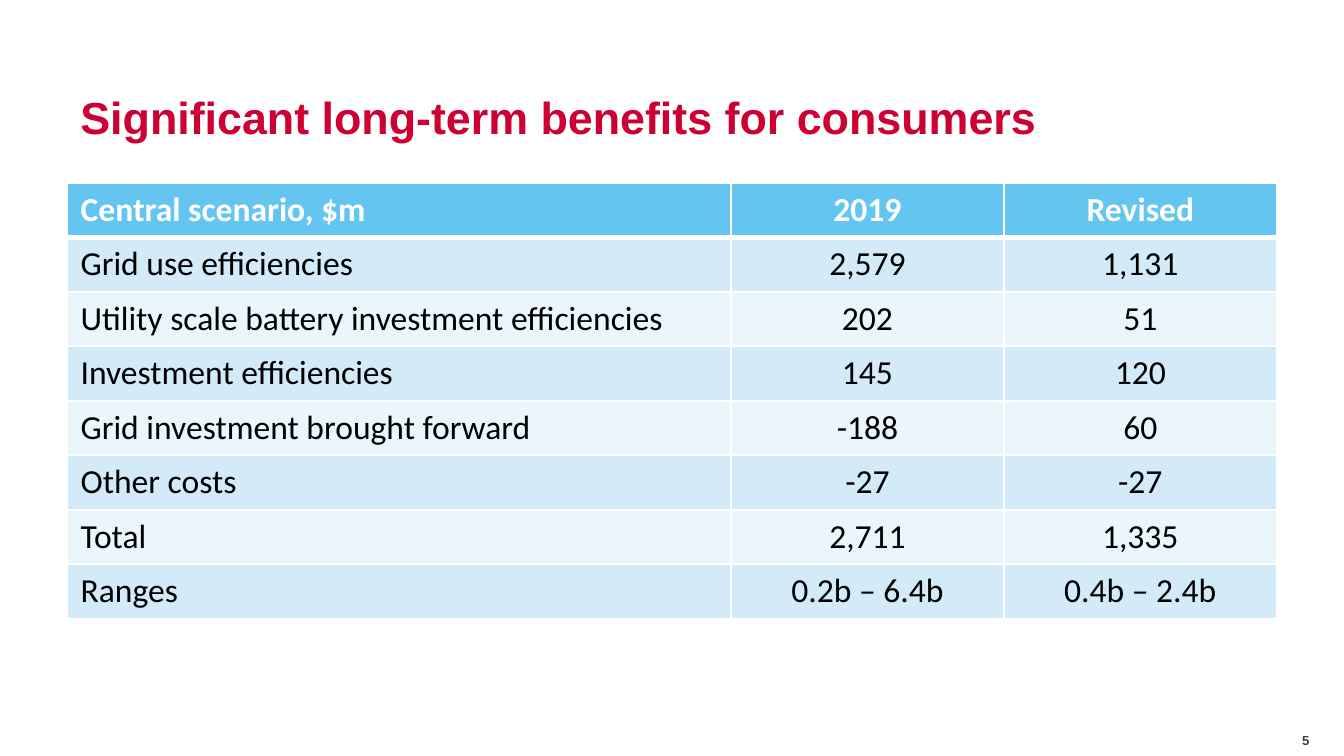
import pptx
import pptx.util
import pptx.dml.color
import pptx.enum.text
import pptx.oxml
import pptx.oxml.ns
from pptx.util import Inches

RGBColor = pptx.dml.color.RGBColor
RED = RGBColor(0xCD, 0x00, 0x34)
GREY = RGBColor(0x40, 0x40, 0x40)
WHITE = RGBColor(0xFF, 0xFF, 0xFF)
BLACK = RGBColor(0x00, 0x00, 0x00)
HEADER_BLUE = RGBColor(0x63, 0xC5, 0xF0)
BAND_BLUES = [RGBColor(0xEA, 0xF5, 0xFC), RGBColor(0xD3, 0xEA, 0xF9)]

TITLE = "Significant long-term benefits for consumers"
PAGE_NUMBER = "5"
ROWS = [
    ("Central scenario, $m", "2019", "Revised"),
    ("Grid use efficiencies", "2,579", "1,131"),
    ("Utility scale battery investment efficiencies", "202", "51"),
    ("Investment efficiencies", "145", "120"),
    ("Grid investment brought forward", "-188", "60"),
    ("Other costs", "-27", "-27"),
    ("Total", "2,711", "1,335"),
    ("Ranges", "0.2b – 6.4b", "0.4b – 2.4b"),
]
SLIDE_WIDTH = 10
SLIDE_HEIGHT = SLIDE_WIDTH * 9 / 16
COLUMN_WIDTHS = [4.94, 2.03, 2.03]
TABLE_HEIGHT = 3.24

TITLE_FORMAT = {"name": "Arial", "size": pptx.util.Pt(24), "bold": True}
NUMBER_FORMAT = {"name": "Arial", "size": pptx.util.Pt(7), "bold": True}
HEADER_FORMAT = {"name": "Calibri", "size": pptx.util.Pt(18), "bold": True}
BODY_FORMAT = {**HEADER_FORMAT, "bold": False}


def write(paragraph, text, font_format, color):
    run = paragraph.add_run()
    run.text = text
    for name, value in font_format.items():
        setattr(run.font, name, value)
    run.font.color.rgb = color


def add_text(slide, box, text, font_format, color):
    shape = slide.shapes.add_textbox(*map(Inches, box))
    shape.text_frame.word_wrap = True
    shape.text_frame.vertical_anchor = pptx.enum.text.MSO_ANCHOR.MIDDLE
    paragraph = shape.text_frame.paragraphs[0]
    write(paragraph, text, font_format, color)
    return paragraph


def set_borders(cell, widths):
    properties = cell._tc.get_or_add_tcPr()
    for index, (side, width) in enumerate(widths.items()):
        line = pptx.oxml.parse_xml(
            f'<a:ln{side} {pptx.oxml.ns.nsdecls("a")} w="{pptx.util.Pt(width)}">'
            f'<a:solidFill><a:srgbClr val="{WHITE}"/></a:solidFill></a:ln{side}>'
        )
        properties.insert(index, line)


def add_benefits_table(slide):
    frame = slide.shapes.add_table(
        len(ROWS), len(COLUMN_WIDTHS), Inches(0.5), Inches(1.36),
        Inches(sum(COLUMN_WIDTHS)), Inches(TABLE_HEIGHT),
    )
    table = frame.table
    for column, width in zip(table.columns, COLUMN_WIDTHS):
        column.width = Inches(width)
    for row_index, values in enumerate(ROWS):
        header = row_index == 0
        for column_index, text in enumerate(values):
            cell = table.cell(row_index, column_index)
            cell.fill.solid()
            cell.fill.fore_color.rgb = HEADER_BLUE if header else BAND_BLUES[row_index % 2]
            set_borders(cell, {
                "L": 1, "R": 1,
                "T": 3 if row_index == 1 else 1,
                "B": 3 if header else 1,
            })
            paragraph = cell.text_frame.paragraphs[0]
            if column_index:
                paragraph.alignment = pptx.enum.text.PP_ALIGN.CENTER
            write(paragraph, text, HEADER_FORMAT if header else BODY_FORMAT,
                  WHITE if header else BLACK)


def main():
    presentation = pptx.Presentation()
    presentation.slide_width = Inches(SLIDE_WIDTH)
    presentation.slide_height = Inches(SLIDE_HEIGHT)
    slide = presentation.slides.add_slide(presentation.slide_layouts[6])
    add_benefits_table(slide)
    add_text(slide, (9.59, 5.39, 0.46, 0.23), PAGE_NUMBER, NUMBER_FORMAT, GREY)
    title = add_text(slide, (0.5, 0.34, 9, 0.9), TITLE, TITLE_FORMAT, RED)
    title.line_spacing = pptx.util.Pt(40)
    presentation.save("out.pptx")


if __name__ == "__main__":
    main()
